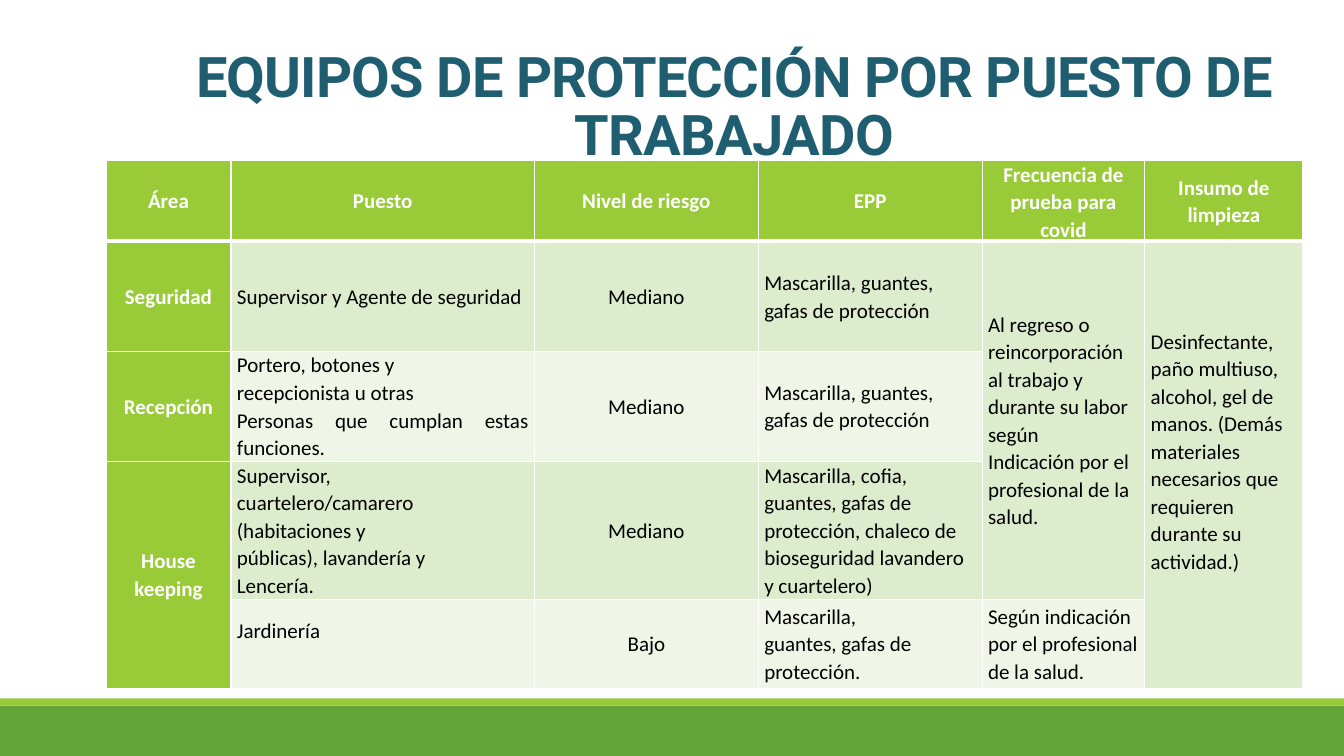
from lxml import etree
from pptx import Presentation
from pptx.dml.color import RGBColor
from pptx.enum.shapes import MSO_SHAPE
from pptx.enum.text import MSO_ANCHOR, PP_ALIGN
from pptx.oxml.ns import qn
from pptx.util import Cm, Pt

RECTANGLE = MSO_SHAPE.RECTANGLE
MIDDLE, BOTTOM = MSO_ANCHOR.MIDDLE, MSO_ANCHOR.BOTTOM
LEFT, CENTER, JUSTIFY = PP_ALIGN.LEFT, PP_ALIGN.CENTER, PP_ALIGN.JUSTIFY

WHITE = RGBColor(0xFF, 0xFF, 0xFF)
BLACK = RGBColor(0x00, 0x00, 0x00)
TEAL = RGBColor(0x1E, 0x5E, 0x70)
GREEN = RGBColor(0x63, 0xA5, 0x37)
LIME = RGBColor(0x99, 0xCB, 0x38)
BAND_DARK = RGBColor(0xDE, 0xEC, 0xCE)
BAND_LIGHT = RGBColor(0xEF, 0xF6, 0xE8)

SLIDE_WIDTH, SLIDE_HEIGHT = 33.87, 19.05
COLUMN_WIDTHS = (3.15, 7.65, 5.64, 5.64, 4.1, 3.99)
ROW_HEIGHTS = (2.04, 2.77, 2.77, 3.48, 2.24)
LINE_HEIGHT = 0.69

# One entry per cell, one line per paragraph; None is covered by a merged cell.
MASK_GLOVES_GOGGLES = "Mascarilla, guantes, gafas de protección"
ROWS = (
    ("Área", "Puesto", "Nivel de riesgo", "EPP",
     "Frecuencia de prueba para covid", "Insumo de limpieza"),
    ("Seguridad", "Supervisor y Agente de seguridad", "Mediano", MASK_GLOVES_GOGGLES,
     "Al regreso o\nreincorporación al trabajo y durante su labor según\n"
     "Indicación por el profesional de la salud.",
     "Desinfectante,\npaño multiuso,\nalcohol, gel de\n"
     "manos. (Demás materiales necesarios que requieren durante su actividad.)"),
    ("Recepción",
     "Portero, botones y\nrecepcionista u otras\nPersonas que cumplan estas funciones.",
     "Mediano", MASK_GLOVES_GOGGLES, None, None),
    ("House keeping",
     "Supervisor,\ncuartelero/camarero\n(habitaciones y\n"
     "públicas), lavandería y\nLencería.",
     "Mediano",
     "Mascarilla, cofia,\nguantes, gafas de\nprotección, chaleco de\n"
     "bioseguridad lavandero y cuartelero)", None, None),
    (None, "Jardinería", "Bajo", "Mascarilla,\nguantes, gafas de\nprotección.",
     "Según indicación por el profesional\nde la salud.", None),
)
MERGES = (((1, 4), (3, 4)), ((1, 5), (4, 5)), ((3, 0), (4, 0)))
RISK_COLUMN = 2
JUSTIFIED_CELL = (2, 1)
RAISED_CELLS = ((1, 5), (4, 1))


class SlideBuilder:
    def __init__(self, slide):
        self.slide = slide
        self.title_font, self.title_size = "Roboto", Pt(40)
        self.table_font, self.table_size = "Calibri", Pt(15)
        self.inset = Cm(0.15)

    def bar(self, top, height, color):
        shape = self.slide.shapes.add_shape(
            RECTANGLE, 0, Cm(top), Cm(SLIDE_WIDTH), Cm(height))
        shape.shadow.inherit = False
        shape.fill.solid()
        shape.fill.fore_color.rgb = color
        shape.line.fill.background()

    def span(self, para, text, font, size, color, bold):
        span = para.add_run()
        span.text = text
        span.font.name, span.font.size = font, size
        span.font.color.rgb, span.font.bold = color, bold
        return span

    def title(self, text, left, top, width, height):
        box = self.slide.shapes.add_textbox(Cm(left), Cm(top), Cm(width), Cm(height))
        frame = box.text_frame
        frame.word_wrap = True
        frame.vertical_anchor = BOTTOM
        para = frame.paragraphs[0]
        para.alignment, para.line_spacing = CENTER, 0.85
        span = self.span(para, text, self.title_font, self.title_size, TEAL, True)
        span.font._element.set("spc", "-50")

    def borders(self, cell, row):
        """Draw white cell borders, thicker below the header row."""
        widths = {"L": 1, "R": 1, "T": 3 if row == 1 else 1, "B": 3 if row == 0 else 1}
        properties = cell._tc.get_or_add_tcPr()
        for side, width in widths.items():
            line = etree.SubElement(properties, qn(f"a:ln{side}"), w=str(Pt(width)))
            fill = etree.SubElement(line, qn("a:solidFill"))
            etree.SubElement(fill, qn("a:srgbClr"), val=str(WHITE))

    def cell(self, cell, row, column, text):
        heading = row == 0 or column == 0
        self.borders(cell, row)
        cell.fill.solid()
        band = BAND_DARK if row % 2 else BAND_LIGHT
        cell.fill.fore_color.rgb = LIME if heading else band
        cell.vertical_anchor = MIDDLE
        cell.margin_left = cell.margin_right = self.inset
        cell.margin_top = 0
        cell.margin_bottom = Cm(LINE_HEIGHT) if (row, column) in RAISED_CELLS else 0
        if text is None:
            return
        if heading or column == RISK_COLUMN:
            alignment = CENTER
        else:
            alignment = JUSTIFY if (row, column) == JUSTIFIED_CELL else LEFT
        frame = cell.text_frame
        for index, line in enumerate(text.split("\n")):
            para = frame.add_paragraph() if index else frame.paragraphs[0]
            para.alignment, para.line_spacing = alignment, 1.07
            self.span(para, line, self.table_font, self.table_size,
                      WHITE if heading else BLACK, heading)

    def table(self, left, top):
        table = self.slide.shapes.add_table(
            len(ROWS), len(COLUMN_WIDTHS), Cm(left), Cm(top),
            Cm(sum(COLUMN_WIDTHS)), Cm(sum(ROW_HEIGHTS))).table
        for column, width in zip(table.columns, COLUMN_WIDTHS):
            column.width = Cm(width)
        for row, height in zip(table.rows, ROW_HEIGHTS):
            row.height = Cm(height)
        for first, last in MERGES:
            table.cell(*first).merge(table.cell(*last))
        for row, texts in enumerate(ROWS):
            for column, text in enumerate(texts):
                self.cell(table.cell(row, column), row, column, text)


def main():
    deck = Presentation()
    deck.slide_width, deck.slide_height = Cm(SLIDE_WIDTH), Cm(SLIDE_HEIGHT)
    page = SlideBuilder(deck.slides.add_slide(deck.slide_layouts[6]))
    page.bar(17.78, 1.27, GREEN)
    page.bar(17.6, 0.18, LIME)
    page.title("EQUIPOS DE PROTECCIÓN POR PUESTO DE TRABAJADO", 3.81, 0.28, 29.39, 4.04)
    page.table(2.67, 4.04)
    deck.save("out.pptx")


if __name__ == "__main__":
    main()
